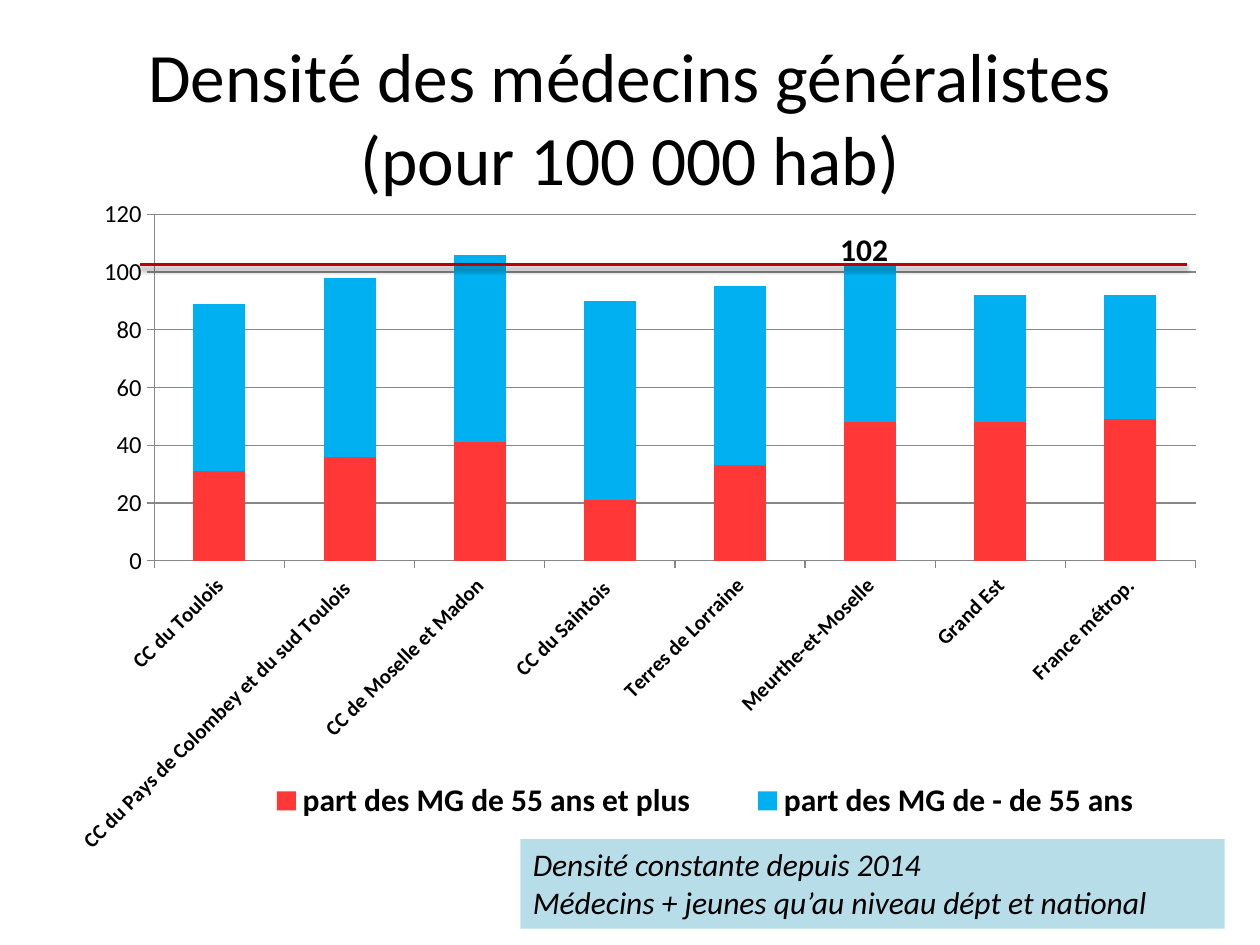
from lxml import etree
from pptx import Presentation
from pptx.chart.data import CategoryChartData
from pptx.dml.color import RGBColor
from pptx.enum import chart as charts, shapes, text
from pptx.oxml import parse_xml
from pptx.oxml.ns import nsdecls, qn
from pptx.util import Inches, Pt

TITLE = "Densité des médecins généralistes\v(pour 100 000 hab)"
CATEGORIES = [
    "CC du Toulois", "CC du Pays de Colombey et du sud Toulois ",
    "CC de Moselle et Madon", "CC du Saintois ", "Terres de Lorraine",
    "Meurthe-et-Moselle", "Grand Est", "France métrop.",
]
SERIES = [
    ("part des MG de 55 ans et plus ", "FF3737", [31, 36, 41, 21, 33, 48, 48, 49]),
    ("part des MG de - de 55 ans", "00B0F0", [58, 62, 65, 69, 62, 54, 44, 43]),
]
REFERENCE_VALUE = "102"
COMMENTS = "Densité constante depuis 2014\nMédecins + jeunes qu’au niveau dépt et national"
PLOT_LAYOUT = (0.09, 0.069, 0.86, 0.485)
LEGEND_LAYOUT = (0.15, 0.84, 0.79, 0.1)
BLACK, GRID_GREY = "000000", "878787"


def colour(value):
    return RGBColor.from_string(value)


def box(left, top, width, height):
    return [Inches(value) for value in (left, top, width, height)]


def format_font(font, size, bold=False, italic=False):
    font.name, font.size = "Calibri", Pt(size)
    font.bold, font.italic = bold, italic
    font.color.rgb = colour(BLACK)


def fill_text(shape, content, size, alignment, **style):
    frame = shape.text_frame
    frame.text = content
    frame.word_wrap = True
    for paragraph in frame.paragraphs:
        paragraph.alignment = alignment
        for run in paragraph.runs:
            format_font(run.font, size, **style)
    return frame


def set_layout(element, index, fractions, inner=False):
    for old in element.findall(qn("c:layout")):
        element.remove(old)
    target = '<c:layoutTarget val="inner"/>' if inner else ""
    modes = "".join(f'<c:{side}Mode val="edge"/>' for side in "xy")
    sizes = "".join(f'<c:{side} val="{value}"/>' for side, value in zip("xywh", fractions))
    element.insert(index, parse_xml(
        f'<c:layout {nsdecls("c")}><c:manualLayout>{target}{modes}{sizes}'
        '</c:manualLayout></c:layout>'))


def add_density_chart(slide):
    data = CategoryChartData(number_format="0")
    data.categories = CATEGORIES
    for name, _, values in SERIES:
        data.add_series(name, values)
    chart = slide.shapes.add_chart(
        charts.XL_CHART_TYPE.COLUMN_STACKED, *box(0.36, 1.31, 9.61, 5.67), data).chart
    chart.has_title = False
    format_font(chart.font, 10)
    plot = chart.plots[0]
    plot.gap_width, plot.overlap, plot.vary_by_categories = 150, 100, False
    for series, (_, fill, _) in zip(plot.series, SERIES):
        series.format.fill.solid()
        series.format.fill.fore_color.rgb = colour(fill)

    category_axis, value_axis = chart.category_axis, chart.value_axis
    for axis, size, bold in ((category_axis, 12, True), (value_axis, 14, False)):
        axis.major_tick_mark = charts.XL_TICK_MARK.OUTSIDE
        axis.format.line.color.rgb = colour(GRID_GREY)
        format_font(axis.tick_labels.font, size, bold)
    category_axis._element.find(qn("c:txPr")).find(qn("a:bodyPr")).set("rot", "-2700000")
    value_axis.minimum_scale, value_axis.maximum_scale, value_axis.major_unit = 0, 120, 20
    value_axis.tick_labels.number_format = "0"
    value_axis.tick_labels.number_format_is_linked = False
    value_axis.has_major_gridlines = True
    value_axis.major_gridlines.format.line.color.rgb = colour(GRID_GREY)

    chart.has_legend = True
    legend = chart.legend
    legend.position = charts.XL_LEGEND_POSITION.BOTTOM
    legend.include_in_layout = False
    format_font(legend.font, 18, bold=True)
    set_layout(legend._element, 1, LEGEND_LAYOUT)
    set_layout(chart._chartSpace.chart.plotArea, 0, PLOT_LAYOUT, inner=True)


def add_reference_line(slide):
    line = slide.shapes.add_connector(
        shapes.MSO_CONNECTOR.STRAIGHT, *box(1.11, 2.1, 9.42, 2.1))
    line.line.color.rgb = colour("C00000")
    line.line.width = Pt(1.5)
    effects = etree.SubElement(line._element.spPr, qn("a:effectLst"))
    shadow = etree.SubElement(
        effects, qn("a:outerShdw"), blurRad=str(Pt(3.1)), dist=str(Pt(1.8)),
        dir="5400000", rotWithShape="0")
    shade = etree.SubElement(shadow, qn("a:srgbClr"), val=BLACK)
    etree.SubElement(shade, qn("a:alpha"), val="35000")


def main():
    """Build the slide on the density of general practitioners."""
    presentation = Presentation()
    presentation.slide_width, presentation.slide_height = Inches(10), Inches(7.5)
    slide = presentation.slides.add_slide(presentation.slide_layouts[5])

    title = slide.shapes.title
    title.left, title.top, title.width, title.height = box(0.5, 0.3, 9, 1.25)
    frame = fill_text(title, TITLE, 39.6, text.PP_ALIGN.CENTER)
    frame.vertical_anchor = text.MSO_ANCHOR.MIDDLE
    frame.auto_size = text.MSO_AUTO_SIZE.NONE

    add_density_chart(slide)
    add_reference_line(slide)

    label = slide.shapes.add_textbox(*box(6.57, 1.78, 0.63, 0.4))
    fill_text(label, REFERENCE_VALUE, 18, text.PP_ALIGN.LEFT, bold=True)

    note = slide.shapes.add_shape(shapes.MSO_SHAPE.RECTANGLE, *box(4.13, 6.66, 5.59, 0.71))
    note.shadow.inherit = False
    note.fill.solid()
    note.fill.fore_color.rgb = colour("B7DEE8")
    note.line.fill.background()
    frame = fill_text(note, COMMENTS, 18, text.PP_ALIGN.LEFT, italic=True)
    frame.vertical_anchor = text.MSO_ANCHOR.TOP

    presentation.save("out.pptx")


if __name__ == "__main__":
    main()
